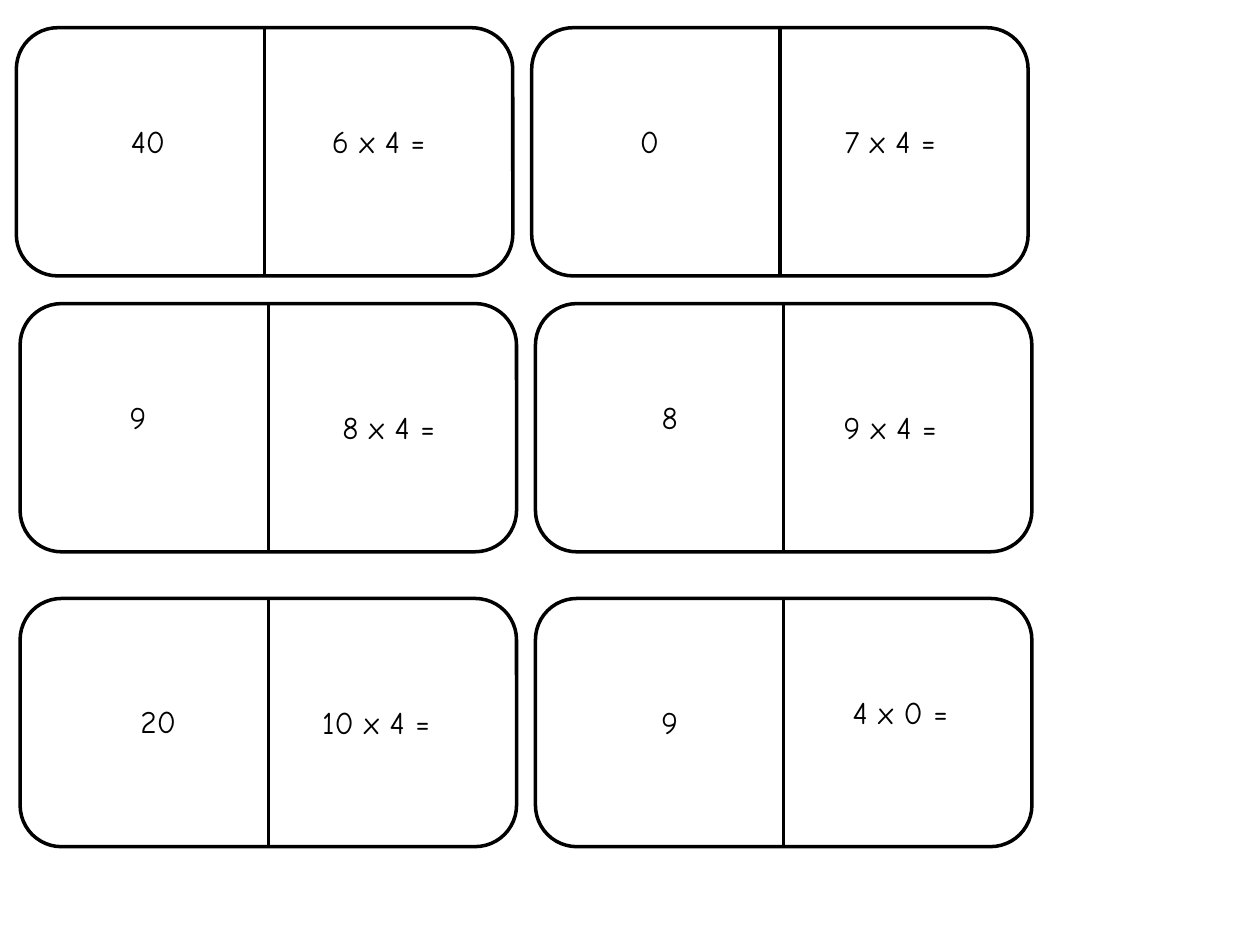
from dataclasses import dataclass

from pptx import Presentation
from pptx.dml.color import RGBColor
from pptx.enum.shapes import MSO_CONNECTOR, MSO_SHAPE
from pptx.enum.text import MSO_AUTO_SIZE, PP_ALIGN
from pptx.util import Inches, Pt
from lxml.etree import SubElement
from pptx.oxml.ns import qn


@dataclass(frozen=True)
class Theme:
    ink: RGBColor = RGBColor(0, 0, 0)
    font: str = "Comic Neue"
    text_size: Pt = Pt(18)
    outline: Pt = Pt(2)


COLUMNS, ROWS = 100, 75
TILE_WIDTH, TILE_HEIGHT = 39.4, 19.7
TILE_PITCH = 40.9
LABEL_HEIGHT = 4

DOMINO_ROWS = [
    (1.3, 2.2, [
        (("40", 8.6, 9.2, 6.3), ("6 x 4 =", 25, 9.2, 10.1)),
        (("0", 48.4, 9.2, 6.3), ("7 x 4 =", 65.6, 9.2, 10.1)),
    ]),
    (1.6, 24.1, [
        (("9", 8.6, 31.1, 4.7), ("8 x 4 =", 25.8, 31.9, 10.1)),
        (("8", 50, 31.1, 6.3), ("9 x 4 =", 65.6, 31.9, 10.1)),
    ]),
    (1.6, 47.5, [
        (("20", 9.4, 55.2, 6.3), ("10 x 4 =", 24.2, 55.3, 11.3)),
        (("9", 50.8, 55.3, 4.7), ("4 x 0 =", 66.4, 54.5, 10.1)),
    ]),
]


def write_text(frame, text, *, font, size, color, align, wrap):
    frame.word_wrap = wrap
    frame.auto_size = MSO_AUTO_SIZE.SHAPE_TO_FIT_TEXT
    paragraph = frame.paragraphs[0]
    paragraph.alignment = align
    run = paragraph.add_run()
    run.text = text
    run.font.name = font
    run.font.size = size
    run.font.color.rgb = color


class DominoSheet:
    def __init__(self, presentation, theme):
        self.theme = theme
        self.column = presentation.slide_width / COLUMNS
        self.row = presentation.slide_height / ROWS
        self.slide = presentation.slides.add_slide(presentation.slide_layouts[6])

    def place(self, *lengths):
        units = (self.column, self.row) * 2
        return [round(length * unit) for length, unit in zip(lengths, units)]

    def stroke(self, line):
        line.color.rgb = self.theme.ink
        line.width = self.theme.outline

    def tile(self, left, top):
        domino = self.slide.shapes.add_group_shape()
        border = domino.shapes.add_shape(
            MSO_SHAPE.ROUNDED_RECTANGLE,
            *self.place(left, top, TILE_WIDTH, TILE_HEIGHT))
        border.shadow.inherit = False
        border.fill.background()
        self.stroke(border.line)
        middle = left + TILE_WIDTH / 2
        divider = domino.shapes.add_connector(
            MSO_CONNECTOR.STRAIGHT,
            *self.place(middle, top, middle, top + TILE_HEIGHT))
        self.stroke(divider.line)
        SubElement(divider._element.spPr, qn("a:effectLst"))

    def label(self, text, left, top, width, wrap):
        label = self.slide.shapes.add_textbox(
            *self.place(left, top, width, LABEL_HEIGHT))
        write_text(label.text_frame, text, font=self.theme.font,
                   size=self.theme.text_size, color=self.theme.ink,
                   align=PP_ALIGN.CENTER, wrap=wrap)


def main():
    presentation = Presentation()
    presentation.slide_width = Inches(10)
    presentation.slide_height = Inches(7.5)
    sheet = DominoSheet(presentation, Theme())
    for left, top, dominoes in DOMINO_ROWS:
        for index, (answer, question) in enumerate(dominoes):
            sheet.tile(left + index * TILE_PITCH, top)
            sheet.label(*answer, wrap=True)
            sheet.label(*question, wrap=False)
    presentation.save("out.pptx")


if __name__ == "__main__":
    main()
